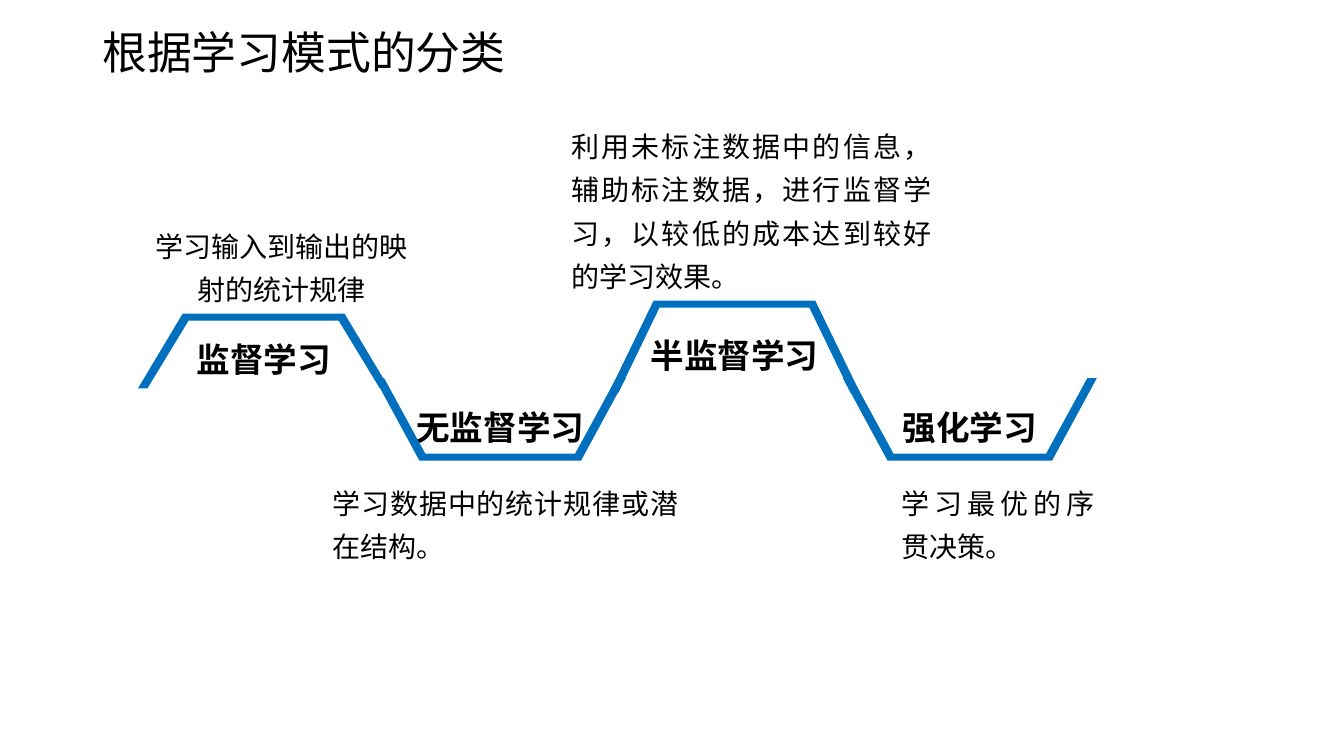
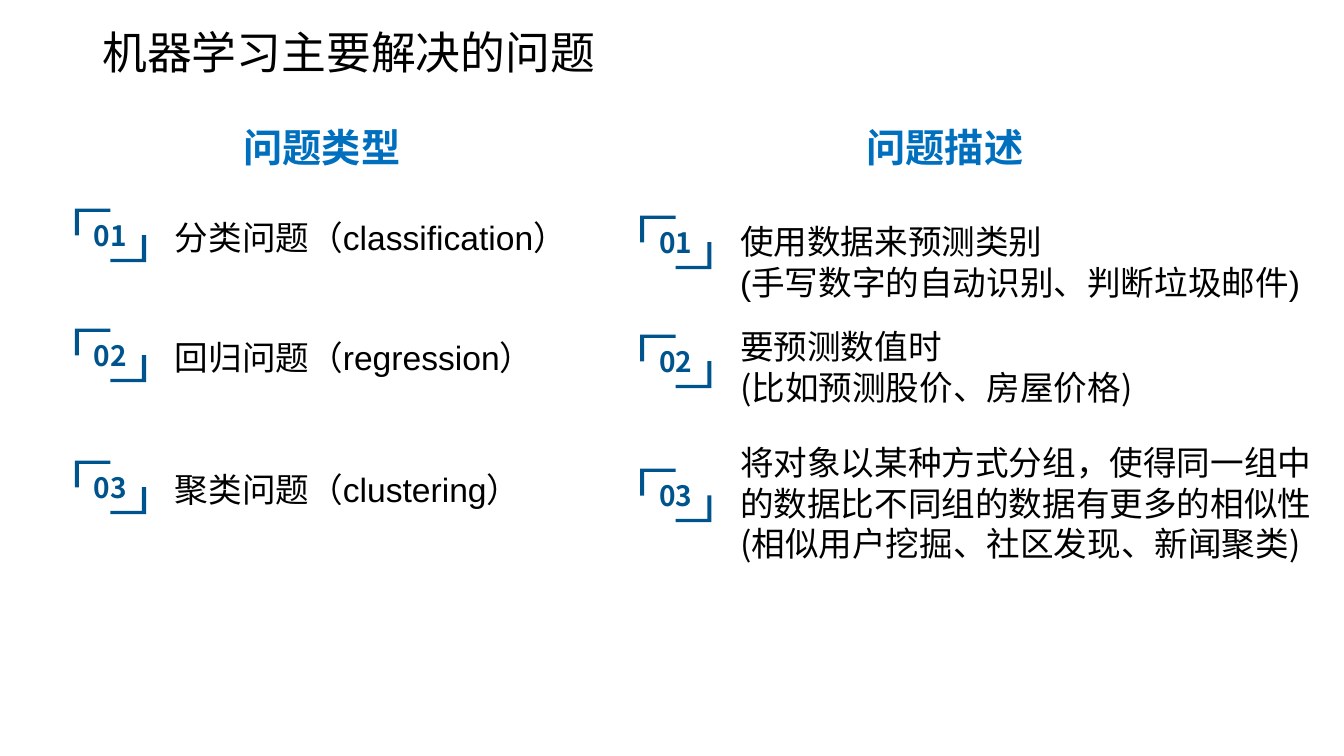
from dataclasses import dataclass

from lxml.etree import SubElement
from pptx import Presentation
from pptx.dml.color import RGBColor
from pptx.enum.text import MSO_ANCHOR as Anchor, PP_ALIGN as Align
from pptx.oxml.ns import qn
from pptx.util import Pt


@dataclass(frozen=True)
class Theme:
    ink = RGBColor(0x00, 0x00, 0x00)
    blue = RGBColor(0x00, 0x70, 0xBE)
    navy = RGBColor(0x00, 0x54, 0x8E)
    cjk = "Noto Sans CJK SC"
    latin = "Arial"
    title = 32
    heading = 28
    body = 24
    note = 20


theme = Theme()


def write_text(shape, lines, size=theme.body, color=theme.ink, font=theme.cjk, bold=False,
               align=Align.LEFT, anchor=Anchor.TOP, pitch=None, side=7.2):
    frame = shape.text_frame
    frame.word_wrap = True
    frame.vertical_anchor = anchor
    frame.margin_left = frame.margin_right = Pt(side)
    frame.margin_top = frame.margin_bottom = Pt(3.6)
    for index, line in enumerate([lines] if isinstance(lines, str) else lines):
        paragraph = frame.add_paragraph() if index else frame.paragraphs[0]
        paragraph.alignment = align
        if pitch:
            paragraph.line_spacing = Pt(pitch)
        for text, face in [(line, font)] if isinstance(line, str) else line:
            run = paragraph.add_run()
            run.text = text
            run.font.size = Pt(size)
            run.font.bold = bold
            run.font.color.rgb = color
            run.font.name = face
            SubElement(run.font._element, qn("a:ea")).set("typeface", theme.cjk)


def draw_outline(slide, left, top, contours, color):
    builder = None
    for contour in contours:
        points = [(Pt(left + x), Pt(top + y)) for x, y in contour]
        if builder is None:
            builder = slide.shapes.build_freeform(*points[0], scale=1.0)
        else:
            builder.move_to(*points[0])
        builder.add_line_segments(points[1:], close=True)
    shape = builder.convert_to_shape()
    shape.shadow.inherit = False
    shape.fill.solid()
    shape.fill.fore_color.rgb = color
    shape.line.fill.background()
    return shape


presentation = Presentation()
presentation.slide_width = Pt(960)
presentation.slide_height = Pt(540)

slides = []
for title in ("根据学习模式的分类", "机器学习主要解决的问题"):
    slide = presentation.slides.add_slide(presentation.slide_layouts[6])
    box = slide.shapes.add_textbox(Pt(66), Pt(0), Pt(828), Pt(73.5))
    write_text(box, title, size=theme.title, anchor=Anchor.MIDDLE, pitch=38)
    slides.append(slide)
modes_slide, problems_slide = slides

slope, foot, inner_slope, bar = 32, 6.8, 36.2, 5
modes = [
    ("强化学习", 602, 270, 181.5, 59, False),
    ("监督学习", 98.6, 224, 179.5, 53.4, True),
    ("半监督学习", 434.9, 214.8, 179.5, 65.8, True),
    ("无监督学习", 267.6, 270, 179.5, 59, False),
]
for name, left, top, width, height, is_peak in modes:
    contour = [
        (slope, 0), (width - slope, 0), (width, height), (width - foot, height),
        (width - inner_slope, bar), (inner_slope, bar), (foot, height), (0, height),
    ]
    if not is_peak:
        contour = [(x, height - y) for x, y in contour]
    shape = draw_outline(modes_slide, left, top, [contour], theme.blue)
    write_text(shape, name, bold=True, align=Align.CENTER, anchor=Anchor.MIDDLE,
               pitch=40, side=22.3)

mode_notes = [
    ("学习输入到输出的映射的统计规律", 99.4, 109.4, 203.8, 113, Align.CENTER, Anchor.BOTTOM),
    ("利用未标注数据中的信息，辅助标注数据，进行监督学习，以较低的成本达到较好的学习效果。",
     401, 62.6, 271.4, 150.5, Align.JUSTIFY, Anchor.BOTTOM),
    ("学习数据中的统计规律或潜在结构。", 230.4, 337, 261.4, 141, Align.JUSTIFY, Anchor.TOP),
    ("学习最优的序贯决策。", 636.5, 337, 152.6, 92, Align.JUSTIFY, Anchor.TOP),
]
for text, left, top, width, height, align, anchor in mode_notes:
    box = modes_slide.shapes.add_textbox(Pt(left), Pt(top), Pt(width), Pt(height))
    write_text(box, text, size=theme.note, font=theme.latin, align=align,
               anchor=anchor, pitch=31)

badge_width, badge_height, text_offset = 51, 38.2, 64.4
upper_corner = [(3, 19.2), (0, 19.2), (0, 0), (25.5, 0), (25.5, 2.3), (3, 2.3)]
lower_corner = [(badge_width - x, badge_height - y) for x, y in upper_corner]

columns = [
    ("问题类型", 36, 53.4, 325.4, 31, [
        (149, 149, [[("分类问题", theme.cjk), ("（classification）", theme.latin)]]),
        (234.7, 234.7, [[("回归问题", theme.cjk), ("（regression）", theme.latin)]]),
        (329, 329, [[("聚类问题", theme.cjk), ("（clustering）", theme.latin)]]),
    ]),
    ("问题描述", 481, 457.2, 436, 29, [
        (154, 154, ["使用数据来预测类别",
                    [("(手写数字的自动识别、判断垃圾邮件)", theme.latin)]]),
        (239, 229, ["要预测数值时", "(比如预测股价、房屋价格)"]),
        (334.8, 312, ["将对象以某种方式分组，使得同一组中的数据比不同组的数据有更多的相似性",
                      "(相似用户挖掘、社区发现、新闻聚类)"]),
    ]),
]
for heading, heading_left, badge_left, text_width, pitch, rows in columns:
    box = problems_slide.shapes.add_textbox(Pt(heading_left), Pt(82.4), Pt(388), Pt(47))
    write_text(box, heading, size=theme.heading, color=theme.blue, bold=True,
               align=Align.CENTER, pitch=36)
    for number, (badge_top, text_top, lines) in enumerate(rows, 1):
        box = problems_slide.shapes.add_textbox(
            Pt(badge_left + text_offset), Pt(text_top), Pt(text_width), Pt(64))
        write_text(box, lines, pitch=pitch)
        badge = draw_outline(problems_slide, badge_left, badge_top,
                             [lower_corner, upper_corner], theme.navy)
        write_text(badge, f"{number:02}", size=theme.note, color=theme.navy, bold=True,
                   align=Align.CENTER, anchor=Anchor.MIDDLE)

presentation.save("out.pptx")
